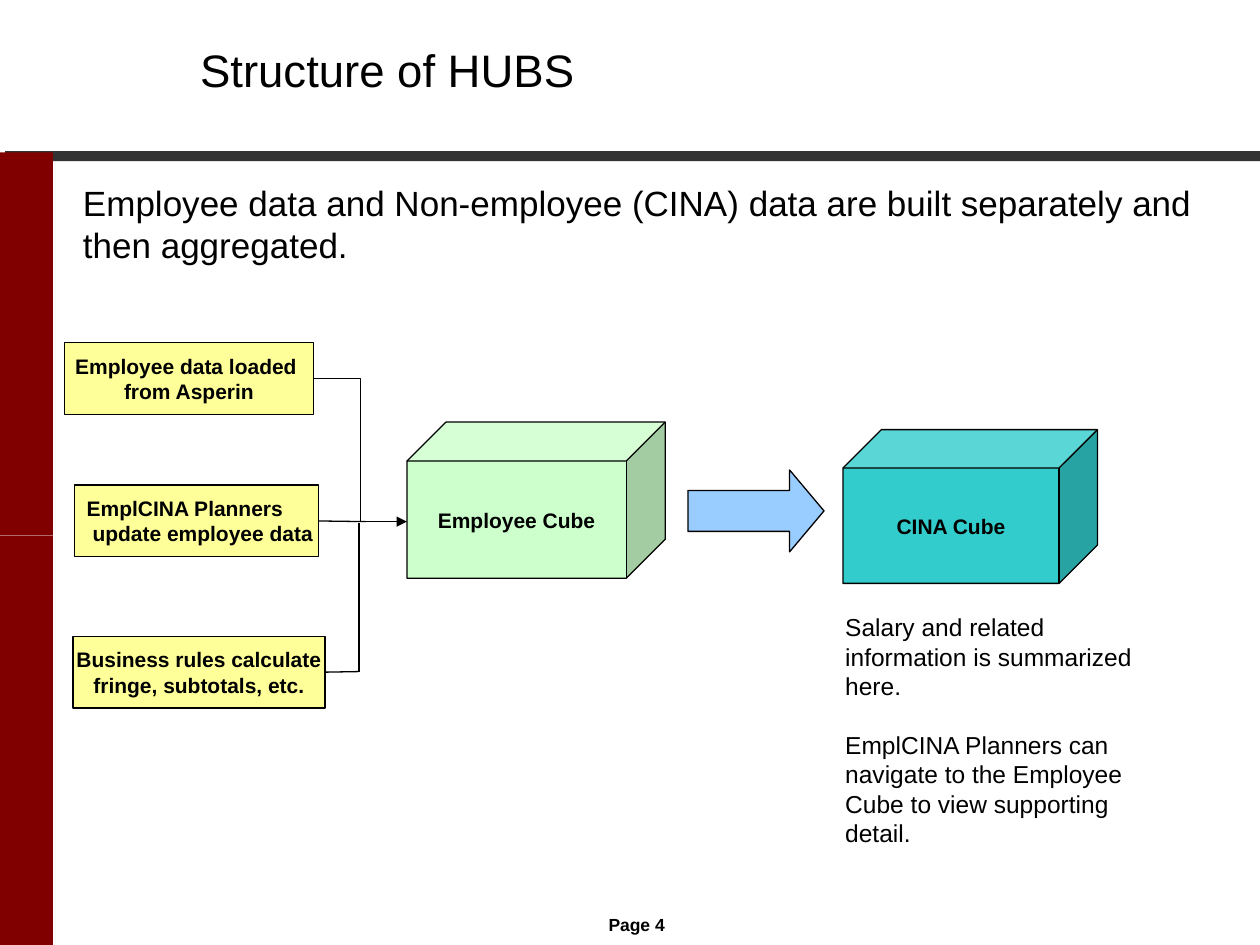
from lxml import etree
from pptx import Presentation
from pptx import util as u
from pptx.dml.color import RGBColor
from pptx.enum import shapes, text
from pptx.oxml.ns import qn

BLACK = "000000"
SHAPE = shapes.MSO_SHAPE
CENTER = text.PP_ALIGN.CENTER
LEFT = text.PP_ALIGN.LEFT


def color(value):
    return RGBColor.from_string(value)


def write(shape, paragraphs, size, bold=False, align=LEFT, anchor=text.MSO_ANCHOR.TOP,
          wrap=True, spacing=None, gap=None):
    """Fill a shape with paragraphs; gap is the space between them."""
    frame = shape.text_frame
    frame.word_wrap = wrap
    frame.vertical_anchor = anchor
    for index, content in enumerate(paragraphs):
        paragraph = frame.add_paragraph() if index else frame.paragraphs[0]
        paragraph.text = content
        paragraph.alignment = align
        paragraph.font.name = "Arial"
        paragraph.font.size = u.Pt(size)
        paragraph.font.bold = bold
        paragraph.font.color.rgb = color(BLACK)
        if spacing:
            paragraph.line_spacing = spacing
        if index and gap:
            paragraph.space_before = gap


def add_text(slide, box, paragraphs, size, **options):
    shape = slide.shapes.add_textbox(*map(u.Inches, box))
    write(shape, paragraphs, size, **options)
    return shape


def add_block(slide, kind, box, fill, outlined=True):
    shape = slide.shapes.add_shape(kind, *map(u.Inches, box))
    shape.shadow.inherit = False
    shape.fill.solid()
    shape.fill.fore_color.rgb = color(fill)
    if outlined:
        shape.line.color.rgb = color(BLACK)
        shape.line.width = u.Pt(0.75)
    else:
        shape.line.fill.background()
    return shape


def add_labelled_block(slide, kind, box, fill, lines, align=CENTER):
    shape = add_block(slide, kind, box, fill)
    write(shape, lines, 12, bold=True, align=align,
          anchor=text.MSO_ANCHOR.MIDDLE, wrap=False)
    return shape


def add_line(slide, start, end, source=None, kind=shapes.MSO_CONNECTOR.STRAIGHT, arrow=False):
    """Draw a connector, joined to the right side of source if given."""
    line = slide.shapes.add_connector(kind, *map(u.Inches, start + end))
    if source is not None:
        line.begin_connect(source, 3)
    line.line.color.rgb = color(BLACK)
    line.line.width = u.Pt(0.75)
    if arrow:
        etree.SubElement(line.line._get_or_add_ln(), qn("a:tailEnd"), type="triangle")
    etree.SubElement(line._element.spPr, qn("a:effectLst"))


def add_frame(slide):
    page = add_text(slide, (4.83, 7.22, 0.8, 0.2), ["Page 4"], 10, bold=True, spacing=1.2)
    frame = page.text_frame
    frame.margin_left = frame.margin_right = frame.margin_top = frame.margin_bottom = 0
    add_block(slide, SHAPE.RECTANGLE, (0.04, 1.2, 9.97, 0.08), "333333", outlined=False)
    for top, height in ((4.25, 3.25), (1.21, 3.04)):
        add_block(slide, SHAPE.RECTANGLE, (0, top, 0.42, height), "800000", outlined=False)


def add_texts(slide):
    add_text(slide, (1.49, 0, 8.42, 1.14), ["Structure of HUBS"], 26,
             anchor=text.MSO_ANCHOR.MIDDLE, spacing=u.Pt(28))
    add_text(slide, (0.56, 1.39, 9.21, 0.7),
             ["Employee data and Non-employee (CINA) data are built separately "
              "and then aggregated."], 20)
    add_text(slide, (6.61, 4.81, 2.79, 1.73),
             ["Salary and related information is summarized here.",
              "EmplCINA Planners can navigate to the Employee Cube to view "
              "supporting detail."], 14, gap=u.Pt(16.8))


def add_diagram(slide):
    add_labelled_block(slide, SHAPE.CUBE, (3.23, 3.35, 2.05, 1.24), "CCFFCC", ["Employee Cube"])
    add_labelled_block(slide, SHAPE.CUBE, (6.69, 3.41, 2.02, 1.22), "33CCCC", ["CINA Cube"])
    inputs = (
        (0.51, 2.72, 1.98, ["Employee data loaded ", "from Asperin"], CENTER),
        (0.59, 3.85, 1.94, ["EmplCINA Planners", " update employee data"], LEFT),
        (0.58, 5.05, 2, ["Business rules calculate", "fringe, subtotals, etc."], CENTER),
    )
    load, update, rules = [
        add_labelled_block(slide, SHAPE.RECTANGLE, (left, top, width, 0.57), "FFFF99", lines, align)
        for left, top, width, lines, align in inputs]
    add_line(slide, (2.49, 3.02), (3.23, 4.14), load, shapes.MSO_CONNECTOR.ELBOW, arrow=True)
    arrow = add_block(slide, SHAPE.RIGHT_ARROW, (5.46, 3.73, 1.08, 0.65), "99CCFF")
    arrow.adjustments[1] = 0.42
    add_line(slide, (2.53, 4.14), (2.9, 4.14), update)
    add_line(slide, (2.85, 4.15), (2.85, 5.33))
    add_line(slide, (2.58, 5.33), (2.85, 5.33), rules)


def main():
    presentation = Presentation()
    presentation.slide_width = u.Inches(10)
    presentation.slide_height = u.Inches(7.5)
    slide = presentation.slides.add_slide(presentation.slide_layouts[6])
    add_frame(slide)
    add_texts(slide)
    add_diagram(slide)
    presentation.save("out.pptx")


if __name__ == "__main__":
    main()
